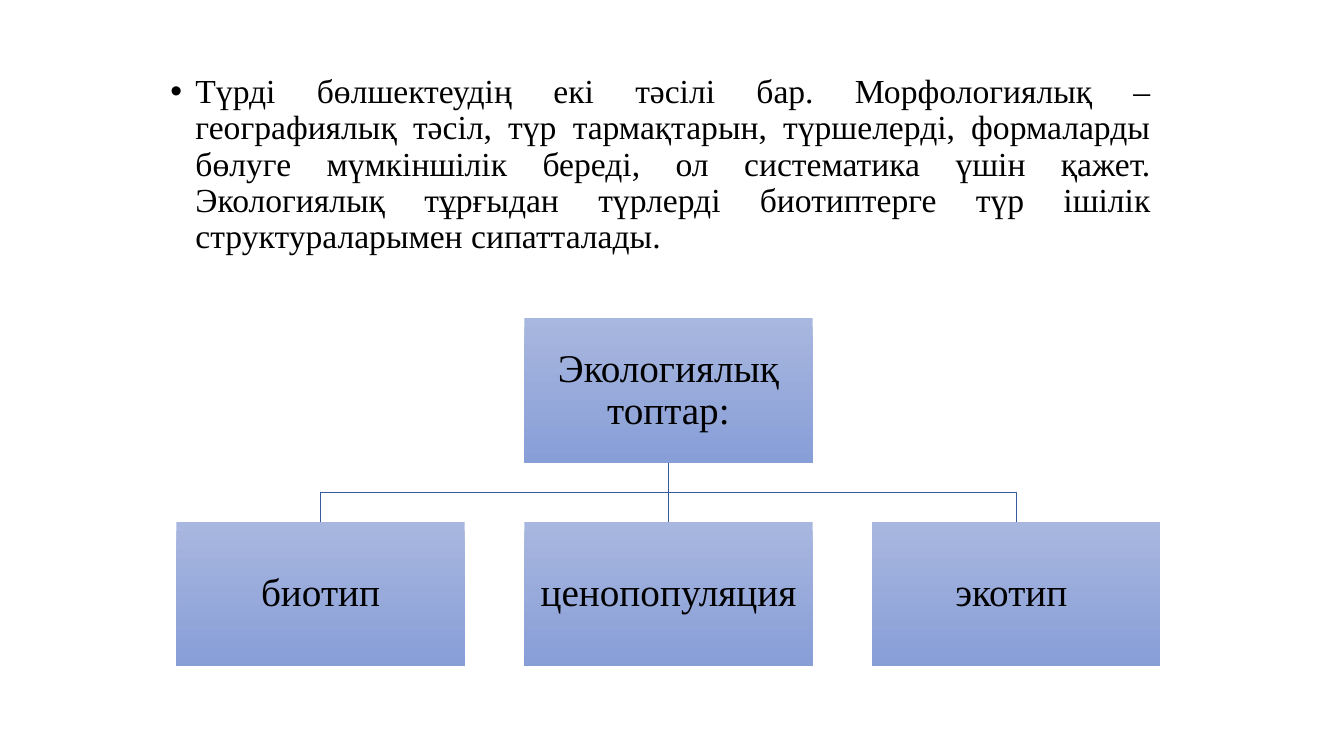
from dataclasses import dataclass

from lxml.etree import SubElement
from pptx import Presentation
from pptx.dml.color import RGBColor
from pptx.enum.shapes import MSO_CONNECTOR, MSO_SHAPE
from pptx.enum.text import MSO_ANCHOR, PP_ALIGN
from pptx.oxml.ns import qn
from pptx.shapes.autoshape import Shape
from pptx.slide import Slide
from pptx.text.text import _Paragraph as Paragraph
from pptx.util import Inches, Pt


@dataclass(frozen=True)
class Theme:
    font: str = "Times New Roman"
    text: RGBColor = RGBColor(0x00, 0x00, 0x00)
    line: RGBColor = RGBColor(0x36, 0x5B, 0x9D)
    box_top: RGBColor = RGBColor(0xA8, 0xB7, 0xDF)
    box_bottom: RGBColor = RGBColor(0x88, 0x9E, 0xD7)
    body_size: int = 24
    box_size: int = 28
    line_spacing: float = 0.9
    line_width: int = 1


@dataclass(frozen=True)
class Node:
    text: str
    left: float
    top: float


THEME = Theme()
BOX_WIDTH, BOX_HEIGHT = 2.86, 1.43
FIRST_LEFT, COLUMN_STEP = 1.75, 3.45
ROOT_TOP, GROUP_TOP = 3.16, 5.18

INTRO = (
    "Түрді бөлшектеудің екі тәсілі бар. Морфологиялық – географиялық тәсіл, "
    "түр тармақтарын, түршелерді, формаларды бөлуге мүмкіншілік береді, ол "
    "систематика үшін қажет. Экологиялық тұрғыдан түрлерді биотиптерге түр "
    "ішілік структураларымен сипатталады. "
)
ROOT = Node("Экологиялық топтар:", FIRST_LEFT + COLUMN_STEP, ROOT_TOP)
GROUPS = [
    Node(name, FIRST_LEFT + column * COLUMN_STEP, GROUP_TOP)
    for column, name in enumerate(["биотип", "ценопопуляция", "экотип "])
]


def write(para: Paragraph, text: str, size: int, align: PP_ALIGN) -> None:
    para.alignment = align
    para.line_spacing = THEME.line_spacing
    span = para.add_run()
    span.text = text
    span.font.name = THEME.font
    span.font.size = Pt(size)
    span.font.color.rgb = THEME.text


def add_bullet(para: Paragraph) -> None:
    properties = para._p.get_or_add_pPr()
    properties.set("marL", str(Inches(0.25)))
    properties.set("indent", str(Inches(-0.25)))
    SubElement(properties, qn("a:buFont")).set("typeface", "Arial")
    SubElement(properties, qn("a:buChar")).set("char", "•")


def add_intro(page: Slide) -> None:
    box = page.shapes.add_textbox(Inches(1.59), Inches(0.69), Inches(9.92), Inches(2.11))
    box.text_frame.word_wrap = True
    para = box.text_frame.paragraphs[0]
    add_bullet(para)
    write(para, INTRO, THEME.body_size, PP_ALIGN.JUSTIFY)


def add_node(page: Slide, node: Node) -> Shape:
    box = page.shapes.add_shape(
        MSO_SHAPE.RECTANGLE,
        Inches(node.left), Inches(node.top), Inches(BOX_WIDTH), Inches(BOX_HEIGHT),
    )
    box.shadow.inherit = False
    box.line.fill.background()
    box.fill.gradient()
    box.fill.gradient_angle = 270
    for stop, color in zip(box.fill.gradient_stops, (THEME.box_top, THEME.box_bottom)):
        stop.color.rgb = color

    frame = box.text_frame
    frame.word_wrap = True
    frame.vertical_anchor = MSO_ANCHOR.MIDDLE
    frame.margin_left = frame.margin_right = Inches(0.02)
    frame.margin_top = frame.margin_bottom = Inches(0.02)
    write(frame.paragraphs[0], node.text, THEME.box_size, PP_ALIGN.CENTER)
    return box


def add_straight_link(page: Slide, parent: Shape, child: Shape) -> None:
    link = page.shapes.add_connector(MSO_CONNECTOR.STRAIGHT, 0, 0, 0, 0)
    link.begin_connect(parent, 2)
    link.end_connect(child, 0)
    link.line.color.rgb = THEME.line
    link.line.width = Pt(THEME.line_width)
    SubElement(link._element.spPr, qn("a:effectLst"))


def add_bent_link(page: Slide, parent: Shape, child: Shape) -> None:
    """Draw a link that turns halfway between the two rows."""
    start_x = parent.left + parent.width // 2
    end_x = child.left + child.width // 2
    start_y = parent.top + parent.height
    middle_y = (start_y + child.top) // 2
    builder = page.shapes.build_freeform(start_x, start_y)
    builder.add_line_segments(
        [(start_x, middle_y), (end_x, middle_y), (end_x, child.top)], close=False
    )
    link = builder.convert_to_shape()
    link.shadow.inherit = False
    link.fill.background()
    link.line.color.rgb = THEME.line
    link.line.width = Pt(THEME.line_width)


def main() -> None:
    deck = Presentation()
    deck.slide_width, deck.slide_height = Inches(13.33), Inches(7.5)
    page = deck.slides.add_slide(deck.slide_layouts[6])

    add_intro(page)
    root = add_node(page, ROOT)
    for group in GROUPS:
        child = add_node(page, group)
        add_link = add_straight_link if group.left == ROOT.left else add_bent_link
        add_link(page, root, child)

    deck.save("out.pptx")


if __name__ == "__main__":
    main()
